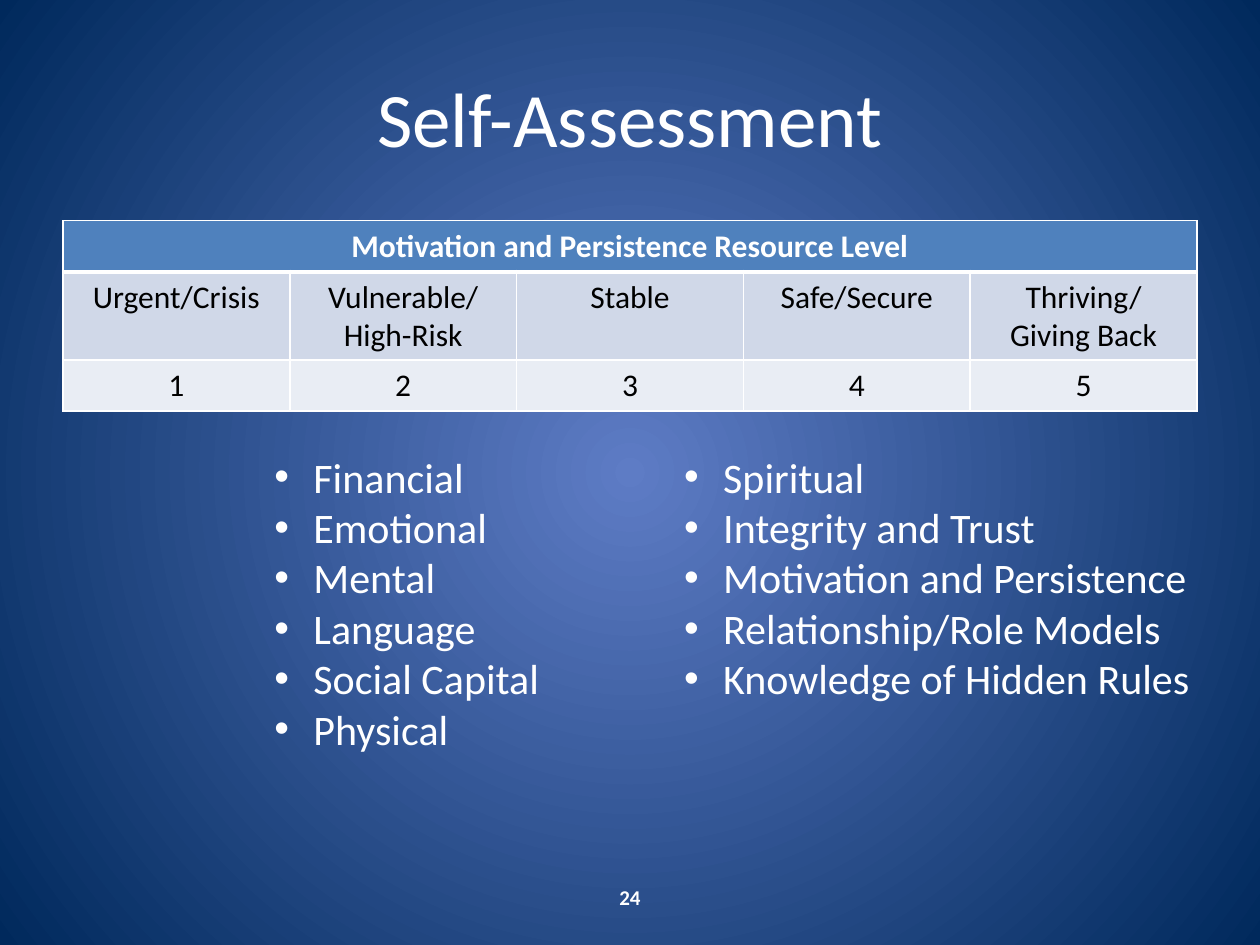
from lxml import etree
from pptx import Presentation
from pptx.dml.color import RGBColor
from pptx.enum.text import MSO_ANCHOR, PP_ALIGN
from pptx.oxml.ns import qn
from pptx.util import Cm, Pt

LEFT, CENTER = PP_ALIGN.LEFT, PP_ALIGN.CENTER
TOP, MIDDLE = MSO_ANCHOR.TOP, MSO_ANCHOR.MIDDLE
WHITE, BLACK = "FFFFFF", "000000"
BLUE, PALE, PALEST = "4F81BD", "D0D8E8", "E9EDF4"
GLOW, NAVY = "5E7CC5", "00295C"


def colour(value):
    return RGBColor.from_string(value)


def write(frame, text, size=18, ink=WHITE, bold=False, align=LEFT,
          anchor=TOP, bullet=None, indent=0.79, font="Calibri"):
    """Fill a text frame, one paragraph for each line of text."""
    frame.word_wrap = True
    frame.vertical_anchor = anchor
    for number, line in enumerate(text.split("\n")):
        para = frame.add_paragraph() if number else frame.paragraphs[0]
        para.alignment = align
        if bullet:
            props = para._p.get_or_add_pPr()
            props.set("marL", str(Cm(indent)))
            props.set("indent", str(-Cm(indent)))
            etree.SubElement(props, qn("a:buFont"), typeface="Arial")
            etree.SubElement(props, qn("a:buChar"), char=bullet)
        span = para.add_run()
        span.text = line
        span.font.name = font
        span.font.size = Pt(size)
        span.font.bold = bold
        span.font.color.rgb = colour(ink)


class SlideBuilder:
    def __init__(self, deck):
        self.page = deck.slides.add_slide(deck.slide_layouts[6])

    def background(self, inner, outer):
        fill = self.page.background.fill
        fill.gradient()
        for stop, value in zip(fill.gradient_stops, (inner, outer)):
            stop.color.rgb = colour(value)
        # Turn the linear gradient into a circular one
        linear = self.page._element.find(".//" + qn("a:lin"))
        circle = etree.Element(qn("a:path"), path="circle")
        etree.SubElement(circle, qn("a:fillToRect"),
                         l="50000", t="50000", r="50000", b="50000")
        linear.getparent().replace(linear, circle)

    def text(self, left, top, width, height, text, **style):
        box = self.page.shapes.add_textbox(Cm(left), Cm(top), Cm(width), Cm(height))
        write(box.text_frame, text, **style)

    def borders(self, cell, bottom=1):
        props = cell._tc.get_or_add_tcPr()
        widths = {"a:lnL": 1, "a:lnR": 1, "a:lnT": 1, "a:lnB": bottom}
        for place, (tag, width) in enumerate(widths.items()):
            line = etree.Element(qn(tag), w=str(Pt(width)))
            solid = etree.SubElement(line, qn("a:solidFill"))
            etree.SubElement(solid, qn("a:srgbClr"), val=WHITE)
            props.insert(place, line)

    def table(self, left, top, width, heights, heading, rows):
        columns = len(rows[0])
        grid = self.page.shapes.add_table(
            len(heights), columns, Cm(left), Cm(top), Cm(width), Cm(sum(heights))).table
        for row, height in zip(grid.rows, heights):
            row.height = Cm(height)
        # Heading across all columns
        grid.cell(0, 0).merge(grid.cell(0, columns - 1))
        write(grid.cell(0, 0).text_frame, heading, bold=True, align=CENTER)
        for row, labels in enumerate(rows, start=1):
            for column, label in enumerate(labels):
                write(grid.cell(row, column).text_frame, label, ink=BLACK, align=CENTER)
        # Fills and borders
        for row, (value, bottom) in enumerate(((BLUE, 3), (PALE, 1), (PALEST, 1))):
            for column in range(columns):
                cell = grid.cell(row, column)
                cell.fill.solid()
                cell.fill.fore_color.rgb = colour(value)
                self.borders(cell, bottom)


def main():
    deck = Presentation()
    deck.slide_width, deck.slide_height = Cm(25.4), Cm(19.05)
    slide = SlideBuilder(deck)
    slide.background(GLOW, NAVY)

    # Title
    slide.text(1.27, 0.76, 22.86, 3.18, "Self-Assessment",
               size=44, align=CENTER, anchor=MIDDLE)

    # Resource levels
    levels = ["Urgent/Crisis", "Vulnerable/\nHigh-Risk", "Stable",
              "Safe/Secure", "Thriving/\nGiving Back"]
    scores = [str(score) for score in range(1, len(levels) + 1)]
    slide.table(1.27, 4.45, 22.86, (1.03, 1.78, 1.03),
                "Motivation and Persistence Resource Level", [levels, scores])

    # Resource lists
    resources = (
        (5.28, 6.4, "Financial\nEmotional\nMental\nLanguage\nSocial Capital\nPhysical"),
        (13.54, 5.38, "Spiritual\nIntegrity and Trust\nMotivation and Persistence\n"
                      "Relationship/Role Models\nKnowledge of Hidden Rules"),
    )
    for left, height, names in resources:
        slide.text(left, 8.97, 11, height, names, size=24, bullet="•")

    # Page number
    slide.text(9.74, 17.58, 5.92, 1.02, "24",
               size=12, bold=True, align=CENTER, anchor=MIDDLE)

    deck.save("out.pptx")


if __name__ == "__main__":
    main()
